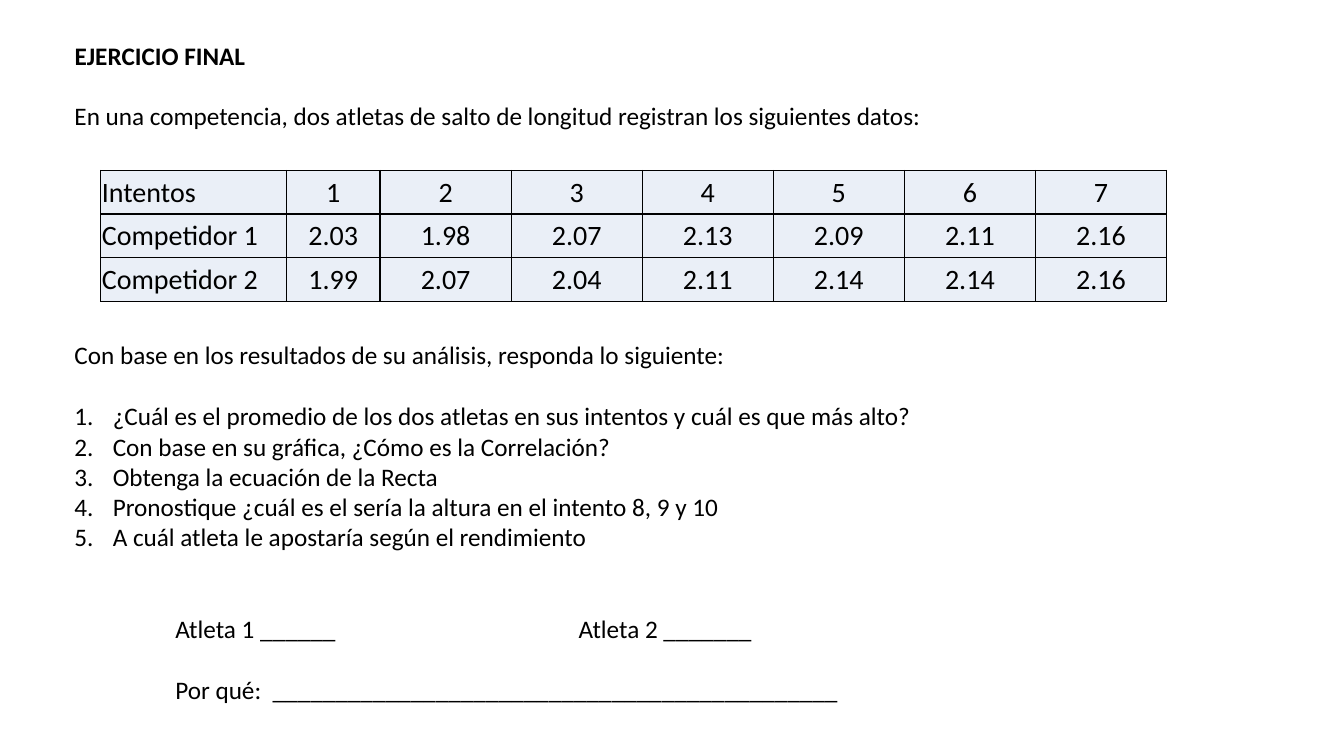
from dataclasses import dataclass

from lxml.etree import SubElement as Sub
from pptx import Presentation
from pptx.dml.color import RGBColor as Color
from pptx.enum.text import MSO_ANCHOR as Anchor, MSO_AUTO_SIZE as Fit, PP_ALIGN as Align
from pptx.oxml import parse_xml
from pptx.oxml.ns import nsdecls, qn
from pptx.util import Inches, Pt


@dataclass(frozen=True)
class Theme:
    font: str = "Calibri"
    ink: str = "000000"
    cell: str = "EAEFF7"
    body: int = 18
    grid: int = 20
    line: int = 1
    gap: int = 22  # height of one body line, in points


@dataclass(frozen=True)
class Box:
    left: float
    top: float
    width: float
    height: float

    def emu(self) -> list:
        return [Inches(n) for n in (self.left, self.top, self.width, self.height)]


@dataclass(frozen=True)
class Line:
    text: str
    lines: int = 0  # empty lines above
    num: bool = False
    tabs: int = 0


THEME = Theme()
INDENT = 0.38

TITLE = Box(0.64, 0.35, 9.85, 0.4)
INTRO = Box(0.64, 0.95, 9.85, 0.4)
GRID = Box(1, 1.69, 10.57, 1.3)
TASKS = Box(0.64, 3.32, 9.85, 4.04)

COLS = [1.84, 0.93] + [1.3] * 6
ROWS = [
    ["Intentos", "1", "2", "3", "4", "5", "6", "7"],
    ["Competidor 1", "2.03", "1.98", "2.07", "2.13", "2.09", "2.11", "2.16"],
    ["Competidor 2", "1.99", "2.07", "2.04", "2.11", "2.14", "2.14", "2.16"],
]

LINES = [
    Line("Con base en los resultados de su análisis, responda lo siguiente:"),
    Line("¿Cuál es el promedio de los dos atletas en sus intentos y cuál es que más alto?", 1, True),
    Line("Con base en su gráfica, ¿Cómo es la Correlación?", num=True),
    Line("Obtenga la ecuación de la Recta", num=True),
    Line("Pronostique ¿cuál es el sería la altura en el intento 8, 9 y 10", num=True),
    Line("A cuál atleta le apostaría según el rendimiento", num=True),
    Line("\tAtleta 1 ______\t\t\tAtleta 2 _______", 2, tabs=5),
    Line("\tPor qué:  _____________________________________________", 1, tabs=1),
]


def write(frame, text: str, *, size: int = THEME.body, bold: bool = False,
          align=Align.JUSTIFY, lines: int = 0, num: bool = False,
          tabs: int = 0, more: bool = False) -> None:
    """Write one paragraph; more=True adds it after those already there."""
    para = frame.add_paragraph() if more else frame.paragraphs[0]
    para.alignment = align
    para.line_spacing = 1.0
    para.space_before = Pt(THEME.gap * lines)
    run = para.add_run()
    run.text = text
    font = run.font
    font.name, font.size, font.bold = THEME.font, Pt(size), bold
    font.color.rgb = Color.from_string(THEME.ink)
    props = para._p.get_or_add_pPr()
    if num:
        props.set("marL", str(Inches(INDENT)))
        props.set("indent", str(-Inches(INDENT)))
        Sub(props, qn("a:buFont"), typeface="+mj-lt")
        Sub(props, qn("a:buAutoNum"), type="arabicPeriod")
    if tabs:
        stops = Sub(props, qn("a:tabLst"))
        for inch in range(1, tabs + 1):
            Sub(stops, qn("a:tab"), pos=str(Inches(inch)), algn="l")


def add_text(slide, box: Box, lines: list[Line]) -> None:
    frame = slide.shapes.add_textbox(*box.emu()).text_frame
    frame.word_wrap = True
    frame.auto_size = Fit.SHAPE_TO_FIT_TEXT
    for i, line in enumerate(lines):
        write(frame, line.text, lines=line.lines, num=line.num,
              tabs=line.tabs, more=i > 0)


def set_title(slide, box: Box, text: str) -> None:
    title = slide.shapes.title
    title.left, title.top, title.width, title.height = box.emu()
    frame = title.text_frame
    frame.word_wrap = True
    frame.auto_size = Fit.NONE
    frame.vertical_anchor = Anchor.TOP
    write(frame, text, bold=True)


def edge(cell) -> None:
    props = cell._tc.get_or_add_tcPr()
    for i, side in enumerate("LRTB"):
        props.insert(i, parse_xml(
            f'<a:ln{side} {nsdecls("a")} w="{Pt(THEME.line)}"><a:solidFill>'
            f'<a:srgbClr val="{THEME.ink}"/></a:solidFill></a:ln{side}>'))


def add_grid(slide, box: Box, rows: list[list[str]], cols: list[float]) -> None:
    table = slide.shapes.add_table(len(rows), len(cols), *box.emu()).table
    table.first_row = table.horz_banding = False
    for col, width in zip(table.columns, cols):
        col.width = Inches(width)
    for r, row in enumerate(rows):
        table.rows[r].height = Inches(box.height / len(rows))
        for c, text in enumerate(row):
            cell = table.cell(r, c)
            cell.fill.solid()
            cell.fill.fore_color.rgb = Color.from_string(THEME.cell)
            cell.margin_left = cell.margin_right = cell.margin_top = Inches(0.01)
            cell.margin_bottom = 0
            cell.vertical_anchor = Anchor.MIDDLE
            edge(cell)
            write(cell.text_frame, text, size=THEME.grid,
                  align=Align.CENTER if c else Align.LEFT)


def main() -> None:
    deck = Presentation()
    deck.slide_width, deck.slide_height = Inches(13.33), Inches(7.5)
    slide = deck.slides.add_slide(deck.slide_layouts.get_by_name("Title Only"))

    # Heading and introduction
    set_title(slide, TITLE, "EJERCICIO FINAL")
    add_text(slide, INTRO, [Line(
        "En una competencia, dos atletas de salto de longitud registran los siguientes datos:")])

    # Results of the jumps
    add_grid(slide, GRID, ROWS, COLS)

    # Questions and answer lines
    add_text(slide, TASKS, LINES)
    deck.save("out.pptx")


if __name__ == "__main__":
    main()
